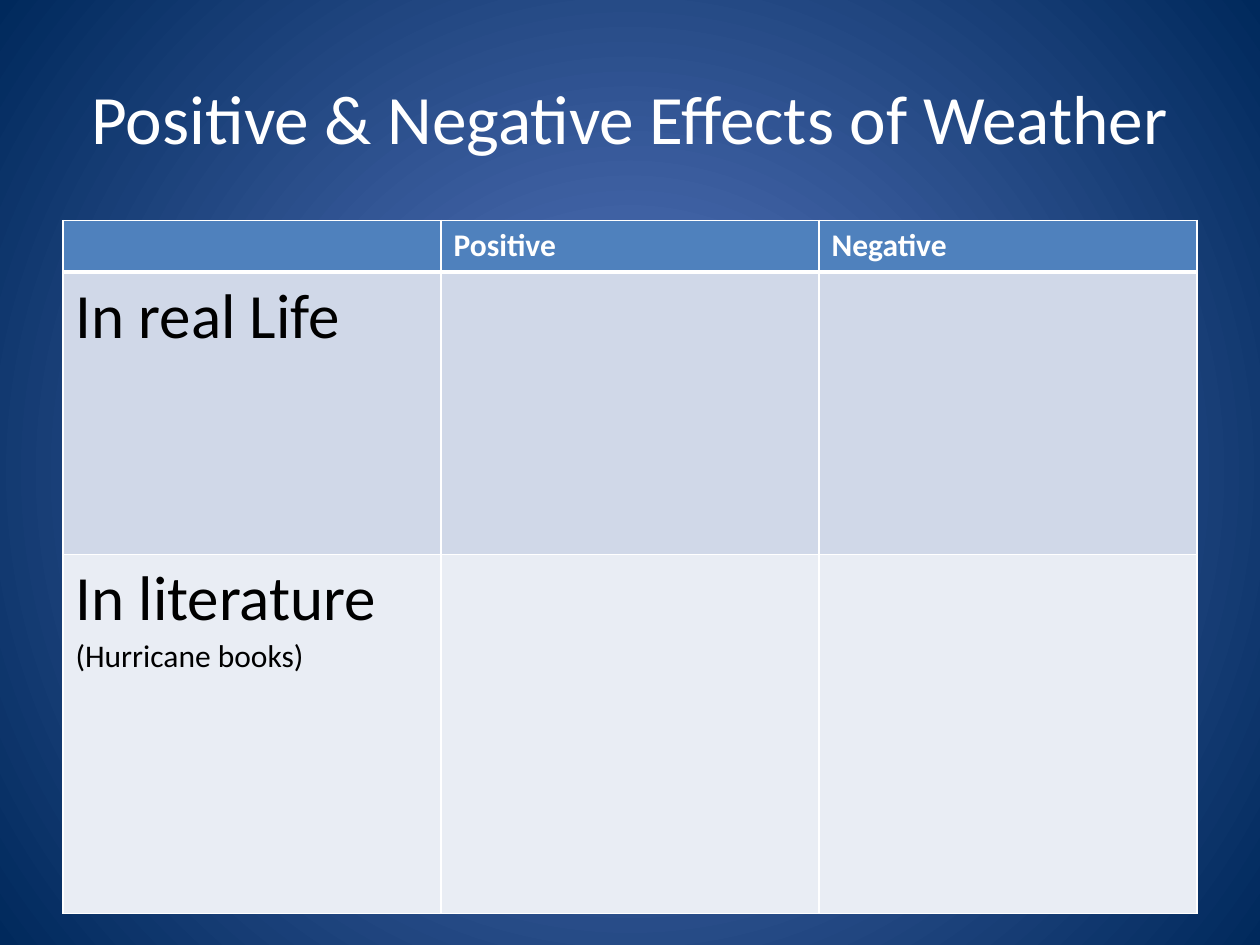
from lxml import etree
from pptx import Presentation
from pptx import util as u
from pptx.dml.color import RGBColor
from pptx.enum import text
from pptx.oxml import ns

WHITE = RGBColor(0xFF, 0xFF, 0xFF)
BLACK = RGBColor(0x00, 0x00, 0x00)
GLOW = RGBColor(0x5E, 0x7C, 0xC5)
NAVY = RGBColor(0x00, 0x29, 0x5C)
HEADER_BLUE = RGBColor(0x4F, 0x81, 0xBD)
BAND_DARK = RGBColor(0xD0, 0xD8, 0xE8)
BAND_LIGHT = RGBColor(0xE9, 0xED, 0xF4)

HEADER = {"size": u.Pt(18), "bold": True}
LABEL = {"size": u.Pt(36), "bold": False}
NOTE = {"size": u.Pt(18), "bold": False}

ROWS = [
    (0.41, HEADER_BLUE, WHITE, [[], [("Positive", HEADER)], [("Negative", HEADER)]]),
    (2.24, BAND_DARK, BLACK, [[("In real Life", LABEL)], [], []]),
    (2.85, BAND_LIGHT, BLACK,
     [[("In literature", LABEL), ("(Hurricane books)", NOTE)], [], []]),
]


class SlideBuilder:
    font_name = "Calibri"

    def __init__(self, slide):
        self.slide = slide

    def background(self, center, edge):
        fill = self.slide.background.fill
        fill.gradient()
        for stop, color in zip(fill.gradient_stops, (center, edge)):
            stop.color.rgb = color
        gradient = next(self.slide.element.iter(ns.qn("a:gradFill")))
        gradient.remove(gradient.find(ns.qn("a:lin")))
        circle = etree.SubElement(gradient, ns.qn("a:path"), {"path": "circle"})
        etree.SubElement(circle, ns.qn("a:fillToRect"),
                         dict.fromkeys("ltrb", "50000"))

    def text_run(self, paragraph, content, color, formats):
        run = paragraph.add_run()
        run.text = content
        run.font.color.rgb = color
        for name, value in {"name": self.font_name, **formats}.items():
            setattr(run.font, name, value)

    def title(self, content, left, top, width, height):
        shape = self.slide.shapes.add_textbox(
            *map(u.Inches, (left, top, width, height)))
        frame = shape.text_frame
        frame.word_wrap = True
        frame.vertical_anchor = text.MSO_ANCHOR.MIDDLE
        paragraph = frame.paragraphs[0]
        paragraph.alignment = text.PP_ALIGN.CENTER
        self.text_run(paragraph, content, WHITE, {"size": u.Pt(39.6)})

    def borders(self, cell, widths):
        properties = cell._tc.get_or_add_tcPr()
        for index, (side, width) in enumerate(widths.items()):
            line = etree.Element(ns.qn(f"a:ln{side}"), w=str(u.Pt(width)))
            fill = etree.SubElement(line, ns.qn("a:solidFill"))
            etree.SubElement(fill, ns.qn("a:srgbClr"), val=str(WHITE))
            properties.insert(index, line)

    def table(self, rows, left, top, width):
        height = sum(row[0] for row in rows)
        shape = self.slide.shapes.add_table(
            len(rows), len(rows[0][3]),
            *map(u.Inches, (left, top, width, height)))
        table = shape.table
        for row_index, (row_height, fill, color, cells) in enumerate(rows):
            table.rows[row_index].height = u.Inches(row_height)
            widths = {"L": 1, "R": 1, "T": 3 if row_index == 1 else 1,
                      "B": 3 if row_index == 0 else 1}
            for column_index, lines in enumerate(cells):
                cell = table.cell(row_index, column_index)
                cell.fill.solid()
                cell.fill.fore_color.rgb = fill
                self.borders(cell, widths)
                frame = cell.text_frame
                for index, (content, formats) in enumerate(lines):
                    paragraph = frame.add_paragraph() if index else frame.paragraphs[0]
                    self.text_run(paragraph, content, color, formats)


def main():
    presentation = Presentation()
    presentation.slide_width = u.Inches(10)
    presentation.slide_height = u.Inches(7.5)
    builder = SlideBuilder(
        presentation.slides.add_slide(presentation.slide_layouts[6]))
    builder.background(GLOW, NAVY)
    builder.title("Positive & Negative Effects of Weather", 0.5, 0.3, 9, 1.25)
    builder.table(ROWS, 0.5, 1.75, 9)
    presentation.save("out.pptx")


if __name__ == "__main__":
    main()
